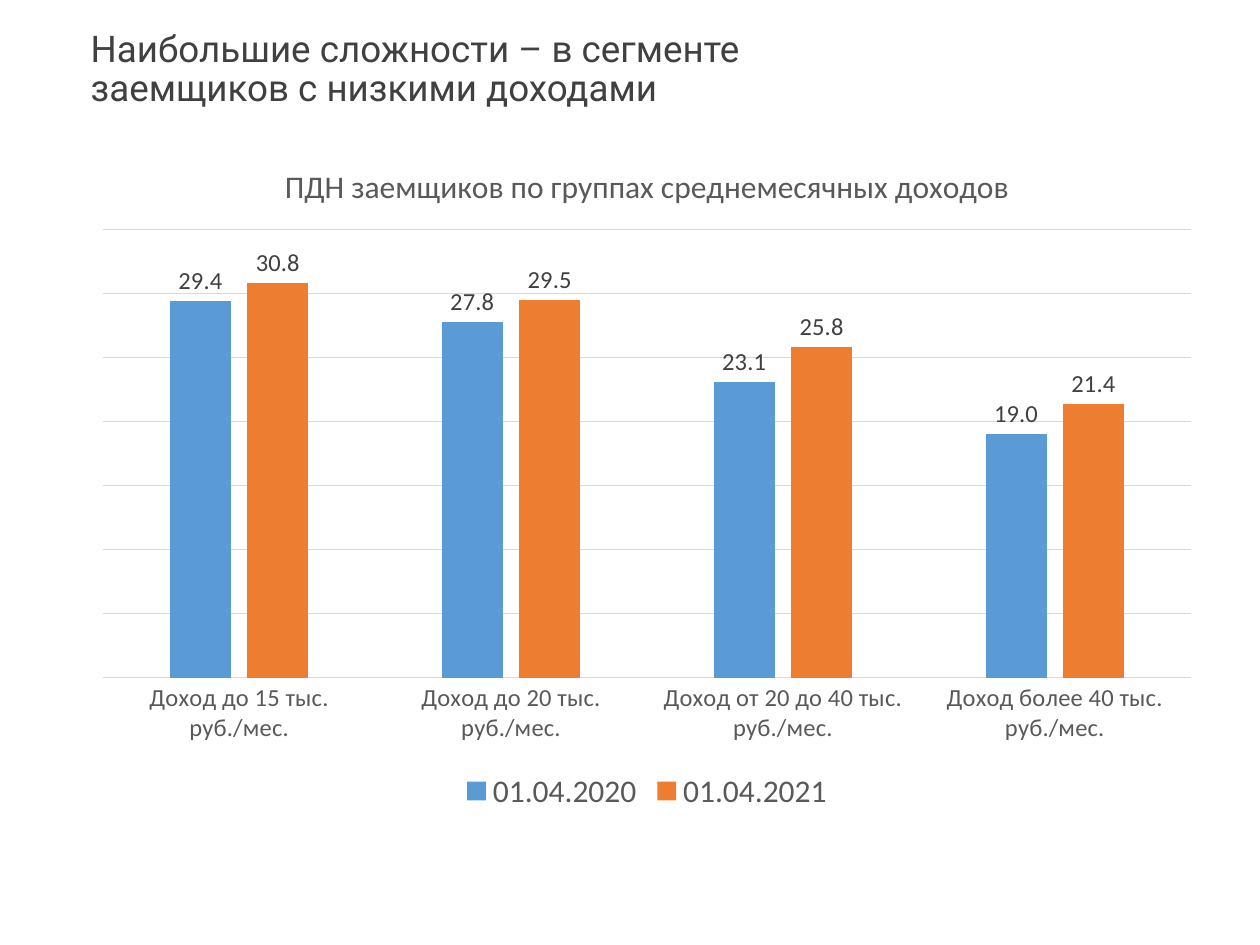
from pptx import Presentation
from pptx.chart.data import CategoryChartData
from pptx.dml.color import RGBColor
from pptx.enum.chart import XL_CHART_TYPE, XL_LABEL_POSITION, XL_LEGEND_POSITION, XL_TICK_MARK
from pptx.enum.text import MSO_ANCHOR
from pptx.util import Inches, Pt

DARK = RGBColor(0x40, 0x40, 0x40)
GRAY = RGBColor(0x59, 0x59, 0x59)
GRID = RGBColor(0xD9, 0xD9, 0xD9)
BLUE = RGBColor(0x5B, 0x9B, 0xD5)
ORANGE = RGBColor(0xED, 0x7D, 0x31)

CATEGORIES = [
    "Доход до 15 тыс. руб./мес.",
    "Доход до 20 тыс. руб./мес.",
    "Доход от 20 до 40 тыс. руб./мес.",
    "Доход более 40 тыс. руб./мес.",
]
SERIES = [
    ("01.04.2020", [29.4, 27.8, 23.1, 19.0], BLUE),
    ("01.04.2021", [30.8, 29.5, 25.8, 21.4], ORANGE),
]


class SlideBuilder:
    """Holds the style and the current slide."""

    heading_font = "Roboto"
    chart_font = "Calibri"

    def __init__(self, slide):
        self.slide = slide

    def style_font(self, font, name, size, color):
        font.name = name
        font.size = Pt(size)
        font.bold = False
        font.color.rgb = color

    def style_line(self, line):
        line.color.rgb = GRID
        line.width = Pt(0.75)

    def heading(self, text, left, top, width, height):
        shape = self.slide.shapes.add_textbox(
            Inches(left), Inches(top), Inches(width), Inches(height))
        text_frame = shape.text_frame
        text_frame.word_wrap = True
        text_frame.vertical_anchor = MSO_ANCHOR.TOP
        text_frame.margin_left = text_frame.margin_right = Inches(0.09)
        text_frame.margin_top = text_frame.margin_bottom = Inches(0.04)
        text_frame.text = text
        paragraph = text_frame.paragraphs[0]
        paragraph.line_spacing = 0.9
        self.style_font(paragraph.runs[0].font, self.heading_font, 21, DARK)

    def column_chart(self, title, categories, series_list, left, top, width, height):
        chart_data = CategoryChartData(number_format="0.0")
        chart_data.categories = categories
        for name, values, _ in series_list:
            chart_data.add_series(name, values)
        chart = self.slide.shapes.add_chart(
            XL_CHART_TYPE.COLUMN_CLUSTERED, Inches(left), Inches(top),
            Inches(width), Inches(height), chart_data).chart
        self.style_font(chart.font, self.chart_font, 10, GRAY)

        chart.has_title = True
        title_frame = chart.chart_title.text_frame
        title_frame.text = title
        self.style_font(title_frame.paragraphs[0].runs[0].font, self.chart_font, 18, GRAY)
        chart.chart_title.include_in_layout = False

        chart.has_legend = True
        chart.legend.position = XL_LEGEND_POSITION.BOTTOM
        chart.legend.include_in_layout = False
        self.style_font(chart.legend.font, self.chart_font, 18, GRAY)

        category_axis = chart.category_axis
        category_axis.major_tick_mark = XL_TICK_MARK.NONE
        self.style_font(category_axis.tick_labels.font, self.chart_font, 14, GRAY)
        self.style_line(category_axis.format.line)

        value_axis = chart.value_axis
        value_axis.minimum_scale, value_axis.maximum_scale = 0, 35
        value_axis.major_unit = 5
        value_axis.has_major_gridlines = True
        self.style_line(value_axis.major_gridlines.format.line)
        value_axis.visible = False

        plot = chart.plots[0]
        plot.vary_by_categories = False
        plot.gap_width = 219
        plot.overlap = -27
        for series, (_, _, color) in zip(plot.series, series_list):
            series.format.fill.solid()
            series.format.fill.fore_color.rgb = color
            labels = series.data_labels
            labels.show_value = True
            labels.number_format = "0.0"
            labels.number_format_is_linked = False
            labels.position = XL_LABEL_POSITION.OUTSIDE_END
            self.style_font(labels.font, self.chart_font, 14, DARK)


def main():
    presentation = Presentation()
    presentation.slide_width = Inches(10)
    presentation.slide_height = Inches(7.5)
    builder = SlideBuilder(presentation.slides.add_slide(presentation.slide_layouts[6]))
    builder.heading("Наибольшие сложности – в сегменте заемщиков с низкими доходами",
                    0.63, 0.2, 5.82, 0.89)
    builder.column_chart("ПДН заемщиков по группах среднемесячных доходов",
                         CATEGORIES, SERIES, 0.64, 1.1, 8.99, 5.38)
    presentation.save("out.pptx")


if __name__ == "__main__":
    main()
